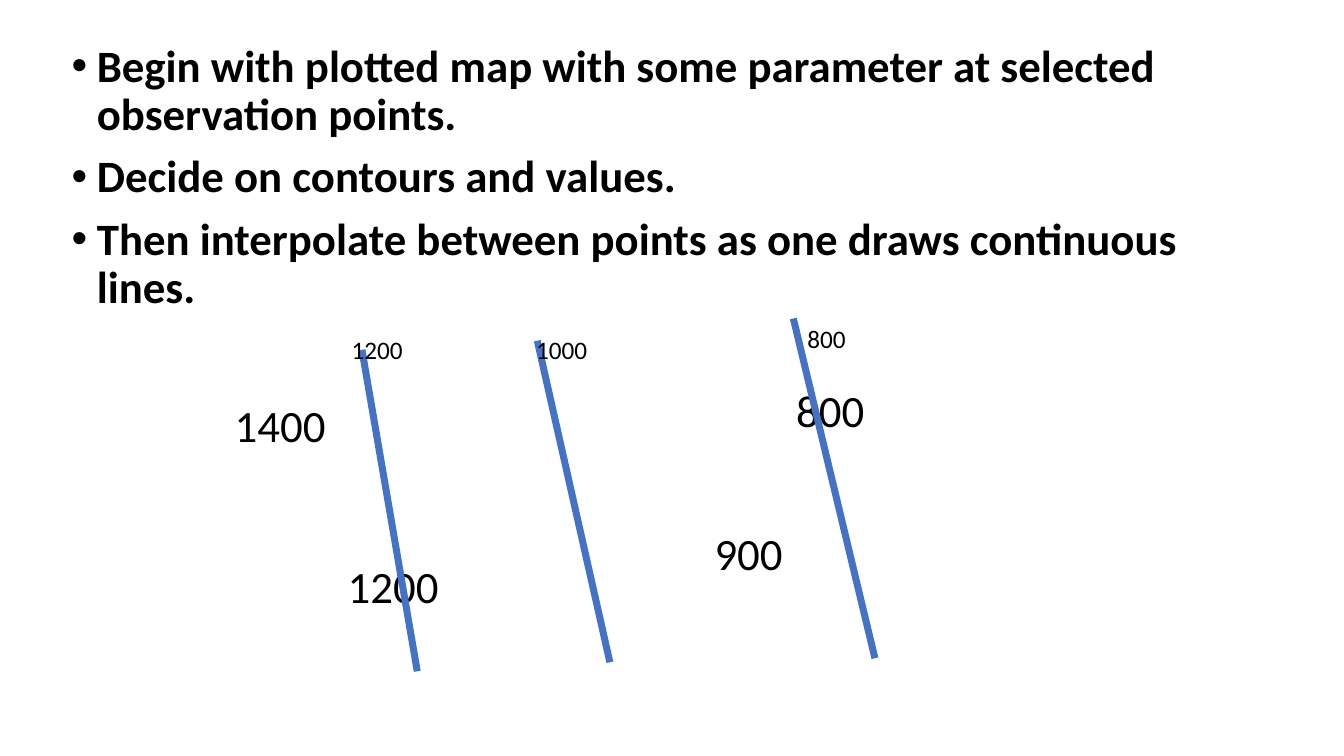
import pptx
import pptx.util
import pptx.dml.color
import pptx.enum.shapes
import pptx.enum.text
import pptx.oxml

Pt = pptx.util.Pt
HUES = {"text": "000000", "line": "4472C4"}
FONT = "Calibri"

deck = pptx.Presentation()
deck.slide_width = pptx.util.Inches(13.33)
deck.slide_height = pptx.util.Inches(7.5)
slide = deck.slides.add_slide(deck.slide_layouts[1])

# Grid of 100 columns by 100 rows
COL = deck.slide_width / 100
ROW = deck.slide_height / 100


def place(col, row):
    return round(col * COL), round(row * ROW)


def style(para, size, bold=False):
    for run in para.runs:
        run.font.name = FONT
        run.font.size = Pt(size)
        run.font.bold = bold
        run.font.color.rgb = pptx.dml.color.RGBColor.from_string(HUES["text"])


# Steps in the body placeholder
title = slide.shapes.title
title.element.getparent().remove(title.element)
body = slide.placeholders[1]
body.left, body.top = place(4.58, 5.07)
body.width, body.height = place(87.45, 29.87)
frame = body.text_frame
frame.text = "\n".join([
    "Begin with plotted map with some parameter at selected observation points.",
    "Decide on contours and values.",
    "Then interpolate between points as one draws continuous lines.",
])
frame.auto_size = pptx.enum.text.MSO_AUTO_SIZE.NONE
frame.vertical_anchor = pptx.enum.text.MSO_ANCHOR.TOP
hang = pptx.util.Inches(0.25)
for para in frame.paragraphs:
    style(para, 32, True)
    para.line_spacing = 0.9
    para.space_before = Pt(10)
    props = para._p.get_or_add_pPr()
    props.set("marL", str(hang))
    props.set("indent", str(-hang))
    mark = pptx.oxml.parse_xml(
        '<a:buChar xmlns:a="http://schemas.openxmlformats.org/drawingml/2006/main" char="•"/>')
    props.append(mark)

# Observed values, contour lines and contour labels
points = [("1400", 16.73, 52), ("800", 58.5, 50),
          ("1200", 25.13, 73.2), ("900", 52.43, 68.93)]
lines = [(39.98, 45.07, 45.38, 87.6), (26.93, 46.27, 31.05, 88.8),
         (59.03, 42.13, 65.1, 87.07)]
labels = [("1200", 25.43, 43.6), ("1000", 39.15, 43.6), ("800", 59.33, 42.13)]

for left, top, right, low in lines:
    line = slide.shapes.add_connector(
        pptx.enum.shapes.MSO_CONNECTOR.STRAIGHT, *place(left, top), *place(right, low))
    line.line.color.rgb = pptx.dml.color.RGBColor.from_string(HUES["line"])
    line.line.width = Pt(5)
    line._element.spPr.append(pptx.oxml.parse_xml(
        '<a:effectLst xmlns:a="http://schemas.openxmlformats.org/drawingml/2006/main"/>'))

first = slide.shapes[1]
for group, size, tall, widths in [(points, 32, 8.53, {3: 6.68, 4: 8.33}),
                                  (labels, 18, 5.33, {3: 4.43, 4: 5.33})]:
    for text, left, top in group:
        box = slide.shapes.add_textbox(*place(left, top), *place(widths[len(text)], tall))
        box.text_frame.text = text
        box.text_frame.word_wrap = False
        box.text_frame.auto_size = pptx.enum.text.MSO_AUTO_SIZE.SHAPE_TO_FIT_TEXT
        style(box.text_frame.paragraphs[0], size)
        # Observed values lie behind the contour lines
        if group is points:
            first.element.addprevious(box.element)

deck.save("out.pptx")
